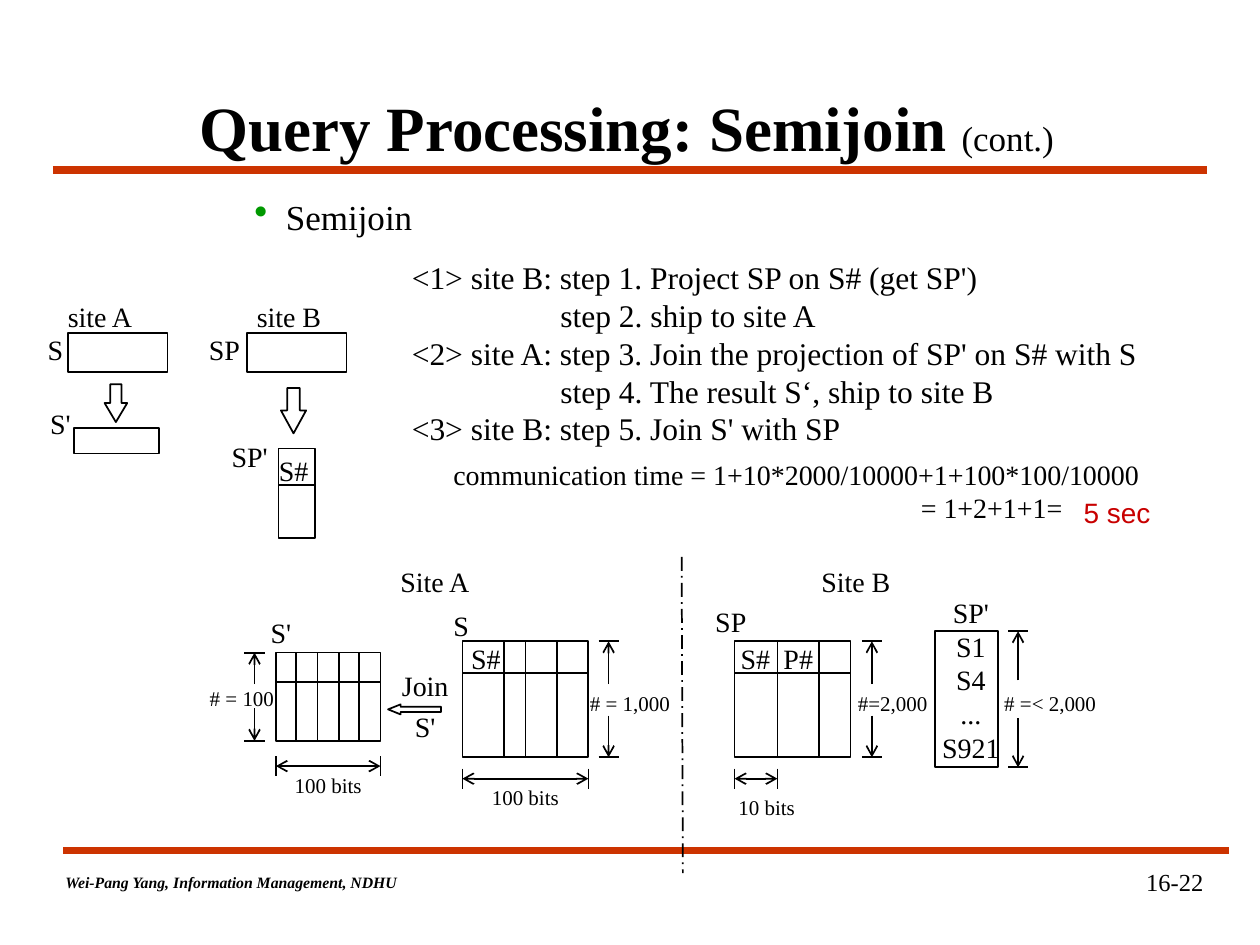
from dataclasses import dataclass
from typing import NamedTuple, Optional

from lxml import etree
from pptx import Presentation
from pptx.dml.color import RGBColor
from pptx.enum import dml, shapes, text
from pptx.oxml.ns import qn
from pptx.util import Inches, Pt


@dataclass(frozen=True)
class Theme:
    serif: str = "Times New Roman"
    sans: str = "Arial"
    black: str = "000000"
    white: str = "FFFFFF"
    rule: str = "CC3300"
    bullet: str = "009900"
    result: str = "C80000"
    title: int = 36
    title_gap: int = 32
    sub: int = 20
    steps: int = 18
    body: int = 16
    number: int = 14
    small: int = 12
    footer: int = 9
    line: float = 1
    thick: float = 4.5


T = Theme()
TICK = 0.08
CENTER = text.PP_ALIGN.CENTER
RIGHT = text.PP_ALIGN.RIGHT


class Label(NamedTuple):
    text: str
    x: float
    y: float
    w: float
    h: float = 0.37
    size: int = T.body
    center: bool = False


class Grid(NamedTuple):
    """A relation: its outline, header line and column dividers."""
    x: float
    y: float
    w: float
    h: float
    header: Optional[float] = None
    columns: tuple[float, ...] = ()
    fill: Optional[str] = None


class Height(NamedTuple):
    """A vertical dimension, open between gap_top and gap_bottom for its label."""
    x: float
    top: float
    bottom: float
    gap_top: float
    gap_bottom: float


class Width(NamedTuple):
    left: float
    right: float
    y: float


prs = Presentation()
prs.slide_width, prs.slide_height = Inches(10), Inches(7.5)
s = prs.slides.add_slide(prs.slide_layouts[6])


def add_run(p, content: str, size: float, font: str = T.serif, color: str = T.black,
            bold: bool = False, italic: bool = False) -> None:
    r = p.add_run()
    r.text = content
    f = r.font
    f.size, f.name, f.bold, f.italic = Pt(size), font, bold, italic
    f.color.rgb = RGBColor.from_string(color)


def add_text(lines: list[str], x: float, y: float, w: float, h: float, *, size: float = T.body,
             align=None, anchor=text.MSO_ANCHOR.TOP, indents: tuple[float, ...] = (),
             space_before: float = 0, line_spacing: Optional[float] = None, **font):
    """Add a text box, one paragraph a line; indents are left margins by line."""
    tf = s.shapes.add_textbox(Inches(x), Inches(y), Inches(w), Inches(h)).text_frame
    tf.word_wrap, tf.vertical_anchor = True, anchor
    for i, line in enumerate(lines):
        p = tf.add_paragraph() if i else tf.paragraphs[0]
        p.alignment = align
        if line_spacing:
            p.line_spacing = line_spacing
        if i and space_before:
            p.space_before = Pt(space_before)
        if indents and indents[i]:
            p._p.get_or_add_pPr().set("marL", str(Inches(indents[i])))
        add_run(p, line, size, **font)
    return tf


def add_label(b: Label) -> None:
    add_text([b.text], b.x, b.y, b.w, b.h, size=b.size, align=CENTER if b.center else None)


def add_line(x1: float, y1: float, x2: float, y2: float, *, color: str = T.black,
             width: float = T.line, head: bool = False, tail: bool = False, dash=None) -> None:
    c = s.shapes.add_connector(shapes.MSO_CONNECTOR.STRAIGHT,
                               Inches(x1), Inches(y1), Inches(x2), Inches(y2))
    c.line.color.rgb, c.line.width = RGBColor.from_string(color), Pt(width)
    if dash:
        c.line.dash_style = dash
    sp_pr = c._element.spPr
    ln = sp_pr.find(qn("a:ln"))
    for tag, shown in (("a:headEnd", head), ("a:tailEnd", tail)):
        if shown:
            etree.SubElement(ln, qn(tag), type="arrow")
    etree.SubElement(sp_pr, qn("a:effectLst"))


def add_outline(kind, x: float, y: float, w: float, h: float, *, fill: Optional[str] = None,
                adjust: tuple[float, ...] = ()) -> None:
    sp = s.shapes.add_shape(kind, Inches(x), Inches(y), Inches(w), Inches(h))
    sp.shadow.inherit = False
    if fill:
        sp.fill.solid()
        sp.fill.fore_color.rgb = RGBColor.from_string(fill)
    else:
        sp.fill.background()
    sp.line.color.rgb, sp.line.width = RGBColor.from_string(T.black), Pt(T.line)
    for i, value in enumerate(adjust):
        sp.adjustments[i] = value


def add_grid(g: Grid) -> None:
    add_outline(shapes.MSO_SHAPE.RECTANGLE, g.x, g.y, g.w, g.h, fill=g.fill)
    if g.header:
        add_line(g.x, g.header, g.x + g.w, g.header)
    for x in g.columns:
        add_line(x, g.y, x, g.y + g.h)


def add_height(d: Height) -> None:
    for start, end in ((d.gap_top, d.top), (d.gap_bottom, d.bottom)):
        add_line(d.x, start, d.x, end, tail=True)
        add_line(d.x - TICK, end, d.x + TICK, end)


def add_width(d: Width) -> None:
    add_line(d.left, d.y, d.right, d.y, head=True, tail=True)
    for x in (d.left, d.right):
        add_line(x, d.y - TICK, x, d.y + TICK)


GRIDS = [
    Grid(0.54, 2.64, 0.79, 0.31), Grid(1.96, 2.64, 0.79, 0.31),
    Grid(0.59, 3.4, 0.67, 0.2), Grid(2.21, 3.56, 0.29, 0.71, 3.85),
    Grid(2.19, 5.18, 0.83, 0.7, 5.41, (2.35, 2.52, 2.69, 2.85), T.white),
    Grid(3.67, 5.09, 1, 0.92, 5.34, (4, 4.17, 4.42)),
    Grid(5.83, 5.09, 0.92, 0.92, 5.34, (6.17, 6.5)), Grid(7.42, 5.01, 0.5, 1.08),
]
HEIGHTS = [
    Height(2.02, 5.18, 5.88, 5.43, 5.62), Height(4.83, 5.09, 6.01, 5.43, 5.68),
    Height(6.92, 5.09, 6.01, 5.43, 5.68), Height(8.08, 5.01, 6.09, 5.4, 5.7),
]
WIDTHS = [Width(2.19, 3.02, 6.08), Width(3.67, 4.67, 6.18), Width(5.83, 6.17, 6.18)]
LABELS = [
    Label("site A", 0.44, 2.33, 0.9),
    Label("site B", 1.94, 2.33, 0.9),
    Label("S", 0.28, 2.59, 0.4),
    Label("SP", 1.56, 2.59, 0.5),
    Label("S'", 0.3, 3.18, 0.5),
    Label("SP'", 1.74, 3.44, 0.6),
    Label("S#", 2.03, 3.55, 0.6, center=True),
    Label("Site A", 3.08, 4.43, 0.83),
    Label("Site B", 6.42, 4.43, 0.83),
    Label("S'", 1.98, 4.84, 0.5, center=True),
    Label("S", 3.41, 4.78, 0.5, center=True),
    Label("SP", 5.55, 4.75, 0.5, center=True),
    Label("S#", 3.64, 5.04, 0.86),
    Label("S#", 5.78, 5.04, 0.5),
    Label("P#", 6.12, 5.04, 0.5),
    Label("# = 100", 1.42, 5.39, 1, 0.3, T.small, True),
    Label("# = 1,000", 4.5, 5.43, 1, 0.3, T.small, True),
    Label("#=2,000", 6.67, 5.43, 0.83, 0.3, T.small, True),
    Label("# =< 2,000", 7.75, 5.43, 1.17, 0.3, T.small, True),
    Label("100 bits", 2.19, 6.08, 0.83, 0.3, T.small, True),
    Label("100 bits", 3.67, 6.18, 1, 0.3, T.small, True),
    Label("10 bits", 5.75, 6.26, 0.67, 0.3, T.small, True),
]
STEPS = [
    "<1> site B: step 1. Project SP on S# (get SP')", "step 2. ship to site A",
    "<2> site A: step 3. Join the projection of SP' on S# with S",
    "step 4. The result S‘, ship to site B", "<3> site B: step 5. Join S' with SP",
]


def add_frame() -> None:
    """Add the rules, footer, title and bullet."""
    add_line(0.42, 1.35, 9.58, 1.35, color=T.rule, width=T.thick)
    add_line(0.5, 6.75, 9.75, 6.75, color=T.rule, width=T.thick)
    add_text(["16-22"], 7.65, 6.83, 2, 0.67, size=T.number, align=RIGHT)
    add_text(["Wei-Pang Yang, Information Management, NDHU"], 0.42, 6.88, 3.23, 0.25,
             size=T.footer, bold=True, italic=True)
    tf = add_text(["Query Processing: Semijoin"], 0.85, 0.67, 8.25, 0.67, size=T.title,
                  align=CENTER, anchor=text.MSO_ANCHOR.MIDDLE, bold=True)
    add_run(tf.paragraphs[0], " ", T.title_gap, bold=True)
    add_run(tf.paragraphs[0], "(cont.)", T.sub)
    tf = add_text(["Semijoin"], 0.42, 1.5, 9.17, 0.45, size=T.sub, indents=(1.75,))
    p_pr = tf.paragraphs[0]._p.get_or_add_pPr()
    p_pr.set("indent", str(Inches(-0.25)))
    etree.SubElement(etree.SubElement(p_pr, qn("a:buClr")), qn("a:srgbClr"), val=T.bullet)
    etree.SubElement(p_pr, qn("a:buSzPct"), val="110000")
    etree.SubElement(p_pr, qn("a:buChar"), char="•")


def main() -> None:
    add_frame()
    add_text(STEPS, 3.17, 2, 6.83, 1.6, size=T.steps, indents=(0, 1.18, 0, 1.18, 0))
    add_text(["communication time = 1+10*2000/10000+1+100*100/10000", "= 1+2+1+1="],
             3.5, 3.58, 6.08, 0.63, indents=(0, 3.71))
    add_text(["5 sec"], 8.47, 3.75, 0.79, 0.5, align=CENTER, line_spacing=1.5,
             font=T.sans, color=T.result)
    for items, draw in ((GRIDS, add_grid), (HEIGHTS, add_height),
                        (WIDTHS, add_width), (LABELS, add_label)):
        for item in items:
            draw(item)
    add_text(["SP'", "S1", "S4", "...", "S921"], 7.33, 4.68, 0.75, 1.44, align=CENTER)
    add_text(["Join", "S'"], 3, 5.26, 0.75, 0.7, align=CENTER, space_before=4)
    add_outline(shapes.MSO_SHAPE.DOWN_ARROW, 0.83, 3.05, 0.18, 0.3, adjust=(0.5, 0.84))
    add_outline(shapes.MSO_SHAPE.DOWN_ARROW, 2.23, 3.08, 0.2, 0.36, adjust=(0.5, 0.91))
    add_outline(shapes.MSO_SHAPE.LEFT_ARROW, 3.08, 5.59, 0.42, 0.08, fill=T.white,
                adjust=(0.5, 1.25))
    add_line(5.41, 4.42, 5.42, 6.93, dash=dml.MSO_LINE.LONG_DASH_DOT)
    prs.save("out.pptx")


if __name__ == "__main__":
    main()
